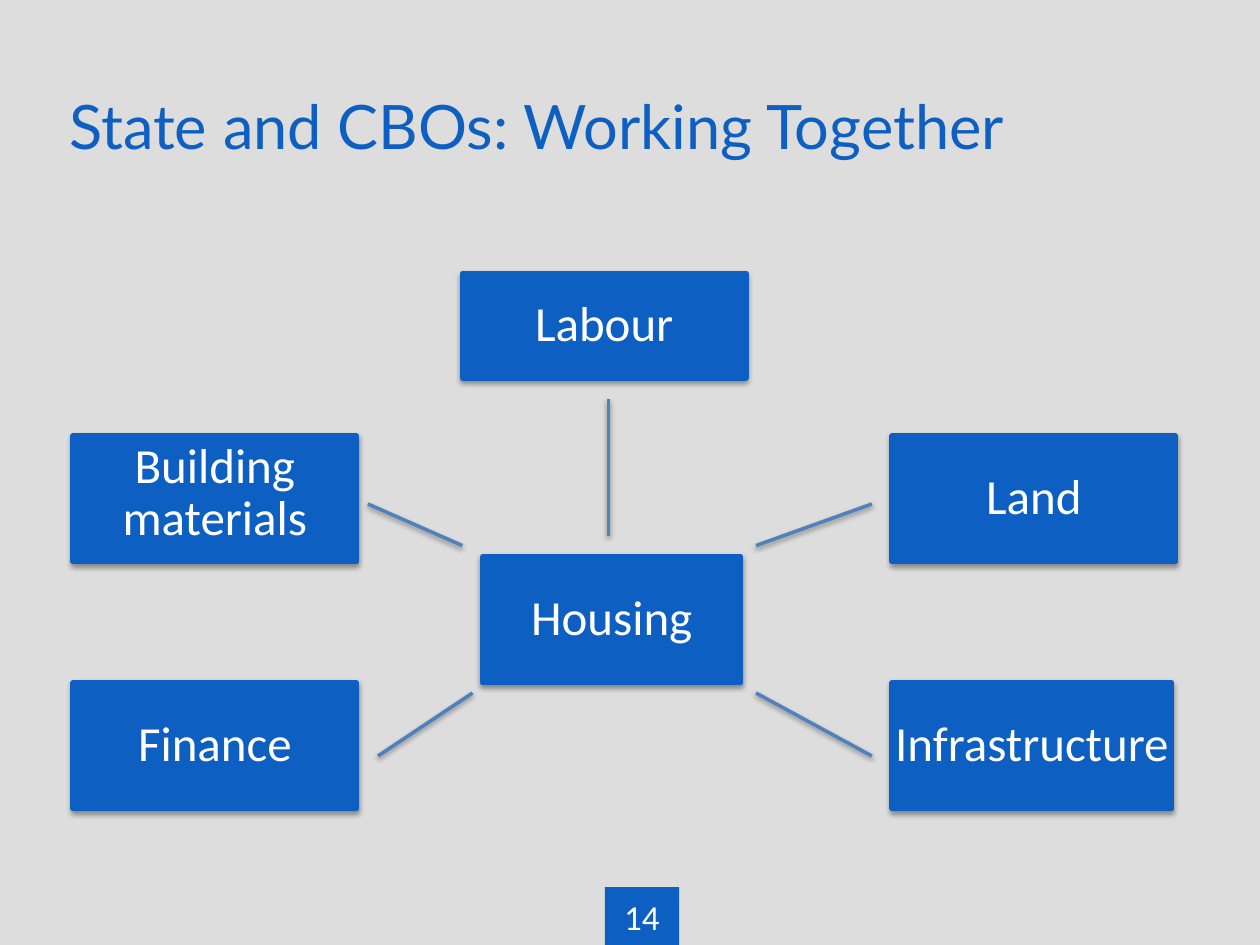
from typing import NamedTuple

from lxml.etree import SubElement
from pptx import Presentation
from pptx.dml.color import RGBColor
from pptx.enum.shapes import MSO_CONNECTOR, MSO_SHAPE
from pptx.enum.text import MSO_ANCHOR, PP_ALIGN
from pptx.oxml.ns import qn
from pptx.util import Inches, Pt

BLUE, STEEL, WHITE, GREY = "0D60C2", "4F81BD", "FFFFFF", "DDDDDD"
LEFT, RIGHT = 0.58, 7.08
UPPER, LOWER = 3.46, 5.42


class Box(NamedTuple):
    text: str
    left: float
    top: float
    width: float = 2.25
    height: float = 1.0
    pitch: float = 0.9


class Link(NamedTuple):
    x1: float
    y1: float
    x2: float
    y2: float


BOXES = [
    Box("Housing", 3.83, 4.42, width=2.05),
    Box("Labour", 3.67, 2.17, height=0.83),
    Box("Land", RIGHT, UPPER),
    Box("Infrastructure", RIGHT, LOWER, width=2.22),
    Box("Finance", LEFT, LOWER),
    Box("Building\nmaterials", LEFT, UPPER, pitch=0.6),
]
LINKS = [
    Link(2.92, 4, 3.67, 4.33),
    Link(6, 4.33, 6.92, 4),
    Link(3.75, 5.5, 3, 6),
    Link(6, 5.5, 6.92, 6),
    Link(4.83, 3.17, 4.83, 4.25),
]


def paint(target, color: str) -> None:
    """Make a fill solid in the given hex colour."""
    target.solid()
    target.fore_color.rgb = RGBColor.from_string(color)


def write(shape, text: str, font: str, size: float, color: str,
          align=PP_ALIGN.CENTER, anchor=MSO_ANCHOR.MIDDLE,
          inset: float = 0.01) -> None:
    frame = shape.text_frame
    frame.word_wrap = True
    frame.vertical_anchor = anchor
    frame.margin_left = frame.margin_right = Inches(inset)
    frame.margin_top = frame.margin_bottom = Inches(inset)
    frame.text = text
    for par in frame.paragraphs:
        par.alignment = align
        par.font.name = font
        par.font.size = Pt(size)
        par.font.color.rgb = RGBColor.from_string(color)


def add_shade(shape) -> None:
    """Add a soft shadow below; call after fill and line are set."""
    effects = SubElement(shape._element.spPr, qn("a:effectLst"))
    shade = SubElement(effects, qn("a:outerShdw"), blurRad=str(Pt(3.1)),
                       dist=str(Pt(1.6)), dir="5400000", rotWithShape="0")
    color = SubElement(shade, qn("a:srgbClr"), val="000000")
    SubElement(color, qn("a:alpha"), val="38000")


def add_block(slide, left: float, top: float, width: float, height: float):
    block = slide.shapes.add_shape(
        MSO_SHAPE.RECTANGLE, Inches(left), Inches(top),
        Inches(width), Inches(height))
    paint(block.fill, BLUE)
    return block


def draw_box(slide, box: Box) -> None:
    block = add_block(slide, box.left, box.top, box.width, box.height)
    paint(block.line.fill, BLUE)
    block.line.width = Pt(3)
    add_shade(block)
    write(block, box.text, "Calibri", 28, WHITE)
    for par in block.text_frame.paragraphs:
        par.line_spacing = box.pitch
        par.space_after = Pt(10)


def draw_link(slide, link: Link) -> None:
    line = slide.shapes.add_connector(
        MSO_CONNECTOR.STRAIGHT, *(Inches(value) for value in link))
    paint(line.line.fill, STEEL)
    line.line.width = Pt(2)
    add_shade(line)


def draw_title(slide, text: str) -> None:
    title = slide.shapes.add_textbox(
        Inches(0.5), Inches(0.31), Inches(9), Inches(1.02))
    write(title, text, "Lato", 35, BLUE, PP_ALIGN.LEFT,
          MSO_ANCHOR.BOTTOM, 0.05)


def draw_number(slide, number: int) -> None:
    block = add_block(slide, 4.8, 7.04, 0.59, 0.47)
    block.line.fill.background()
    block.shadow.inherit = False
    write(block, str(number), "Calibri", 20, WHITE, inset=0.05)


def main() -> None:
    deck = Presentation()
    deck.slide_width, deck.slide_height = Inches(10), Inches(7.5)
    slide = deck.slides.add_slide(deck.slide_layouts[6])
    paint(slide.background.fill, GREY)
    draw_title(slide, "State and CBOs: Working Together")
    for box in BOXES:
        draw_box(slide, box)
    draw_number(slide, 14)
    for link in LINKS:
        draw_link(slide, link)
    deck.save("out.pptx")


if __name__ == "__main__":
    main()
